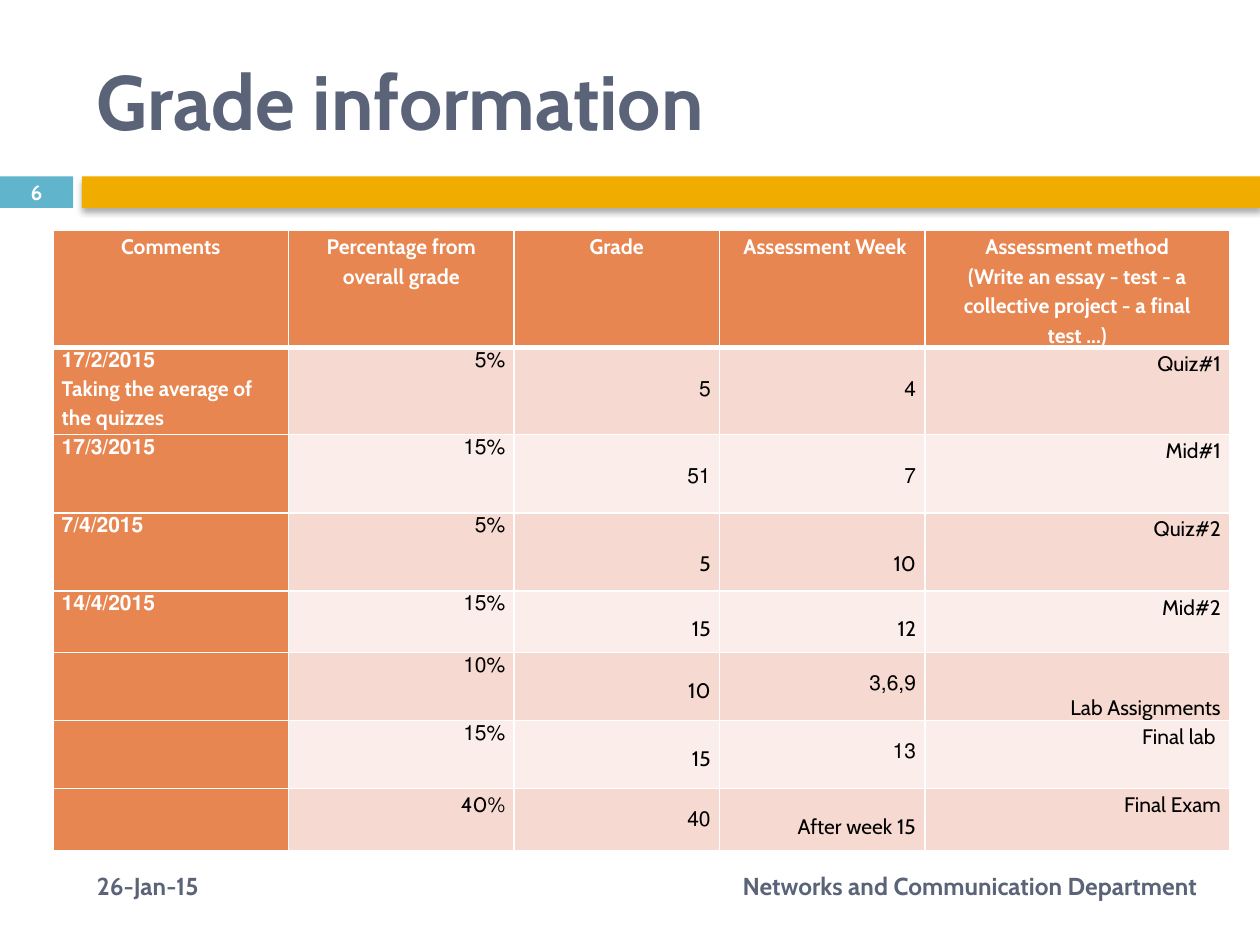
from lxml.etree import SubElement
from pptx import Presentation
from pptx.dml.color import RGBColor
from pptx.enum.shapes import MSO_SHAPE
from pptx.enum.text import MSO_ANCHOR, PP_ALIGN
from pptx.oxml.ns import qn
from pptx.util import Inches, Pt

SLATE, WHITE, BLACK = "5A6378", "FFFFFF", "000000"
TEAL, GOLD, ORANGE = "60B5CC", "F0AD00", "E88651"
BANDS = ("F6D9D0", "FBEDE9")

COLUMN_WIDTHS = (1.87, 1.79, 1.63, 1.63, 2.42)
ROW_HEIGHTS = (0.93, 0.62, 0.62, 0.62, 0.49, 0.54, 0.54, 0.49)
ROWS = (
    ("Comments", "Percentage from overall grade", "Grade", "Assessment Week ",
     "Assessment method\n(Write an essay - test - a collective project - a final test ...)"),
    ("17/2/2015|Taking the average of the quizzes", "5%", "5", "4", "Quiz#1"),
    ("17/3/2015", "15%", "51", "7", "Mid#1"),
    ("7/4/2015", "5%", "5", "10", "Quiz#2 "),
    ("14/4/2015", "15%", "15", "12", "Mid#2"),
    ("", "10%", "10", "3,6,9", "Lab Assignments"),
    ("", "15%", "15", "13", " Final lab "),
    ("", "40%", "40", "After week 15", "Final Exam "),
)
# Row and column of the cells that read left to right
LEFT_TO_RIGHT = {(3, 2), (3, 3), (4, 2), (4, 3), (5, 2), (6, 2), (7, 1)}


def color(hex_text):
    return RGBColor.from_string(hex_text)


class SlideBuilder:
    font = "Cabin"

    def __init__(self, page):
        self.page = page

    def add_words(self, para, text, size, ink, bold=True, align=PP_ALIGN.LEFT):
        para.alignment = align
        for index, line in enumerate(text.split("\n")):
            if index:
                para.add_line_break()
            span = para.add_run()
            span.text = line
            span.font.name = self.font
            span.font.size = Pt(size)
            span.font.bold = bold
            span.font.color.rgb = color(ink)

    def bar(self, left, width, fill, shadow=False):
        box = self.page.shapes.add_shape(
            MSO_SHAPE.RECTANGLE, Inches(left), Inches(1.4), Inches(width), Inches(0.25))
        box.shadow.inherit = False
        box.fill.solid()
        box.fill.fore_color.rgb = color(fill)
        box.line.fill.background()
        if shadow:
            effects = box._element.spPr.find(qn("a:effectLst"))
            outer = SubElement(effects, qn("a:outerShdw"), blurRad=str(Pt(3.5)),
                               dist=str(Pt(2.2)), dir="5400000", rotWithShape="0")
            tint = SubElement(outer, qn("a:srgbClr"), val=BLACK)
            SubElement(tint, qn("a:alpha"), val="32000")

    def text(self, left, top, width, height, text, size, ink=SLATE, align=PP_ALIGN.LEFT):
        box = self.page.shapes.add_textbox(
            Inches(left), Inches(top), Inches(width), Inches(height))
        frame = box.text_frame
        frame.word_wrap = True
        frame.vertical_anchor = MSO_ANCHOR.MIDDLE
        self.add_words(frame.paragraphs[0], text, size, ink, align=align)

    def borders(self, cell, row):
        widths = {"L": 1, "R": 1, "T": 3 if row == 1 else 1, "B": 3 if row == 0 else 1}
        properties = cell._tc.get_or_add_tcPr()
        for side, width in widths.items():
            line = SubElement(properties, qn(f"a:ln{side}"), w=str(Pt(width)))
            SubElement(SubElement(line, qn("a:solidFill")), qn("a:srgbClr"), val=WHITE)

    def cell(self, cell, row, column, text):
        heading = row == 0 or column == 0
        self.borders(cell, row)
        cell.fill.solid()
        cell.fill.fore_color.rgb = color(ORANGE if heading else BANDS[(row - 1) % 2])
        if not text:
            return
        cell.margin_left = cell.margin_right = Inches(0.07)
        cell.margin_top = cell.margin_bottom = 0
        if text == "Lab Assignments":
            cell.vertical_anchor = MSO_ANCHOR.BOTTOM

        align = PP_ALIGN.CENTER if row == 0 else PP_ALIGN.LEFT if column == 0 else PP_ALIGN.RIGHT
        spacing = 1.15
        if row and column in (2, 3):
            spacing = 2.5 if row <= 3 else 2.0
        frame = cell.text_frame
        for index, part in enumerate(text.split("|")):
            para = frame.add_paragraph() if index else frame.paragraphs[0]
            self.add_words(para, part, 12, WHITE if heading else BLACK, heading, align)
            para.line_spacing = spacing
            if (row, column) not in LEFT_TO_RIGHT:
                para._p.get_or_add_pPr().set("rtl", "1")

    def table(self, left, top, widths, heights, rows):
        table = self.page.shapes.add_table(
            len(heights), len(widths), Inches(left), Inches(top),
            Inches(sum(widths)), Inches(sum(heights))).table
        table.first_row = table.horz_banding = False
        for column, width in zip(table.columns, widths):
            column.width = Inches(width)
        for row, height in zip(table.rows, heights):
            row.height = Inches(height)
        for row, texts in enumerate(rows):
            for column, text in enumerate(texts):
                self.cell(table.cell(row, column), row, column, text)


def main():
    deck = Presentation()
    deck.slide_width, deck.slide_height = Inches(10), Inches(7.5)
    builder = SlideBuilder(deck.slides.add_slide(deck.slide_layouts[6]))

    # Divider bars
    builder.bar(0, 0.58, TEAL)
    builder.bar(0.65, 9.35, GOLD, shadow=True)

    # Title, footer and page number
    builder.text(0.67, 0.25, 8.92, 1.08, "Grade information", 44)
    builder.text(0.67, 6.83, 2.92, 0.4, "26-Jan-15", 14)
    builder.text(3.67, 6.83, 5.93, 0.4, "Networks and Communication Department", 14,
                 align=PP_ALIGN.RIGHT)
    builder.text(0, 1.39, 0.58, 0.27, "6", 11.9, WHITE, PP_ALIGN.CENTER)

    # Grade table
    builder.table(0.42, 1.83, COLUMN_WIDTHS, ROW_HEIGHTS, ROWS)

    deck.save("out.pptx")


if __name__ == "__main__":
    main()
